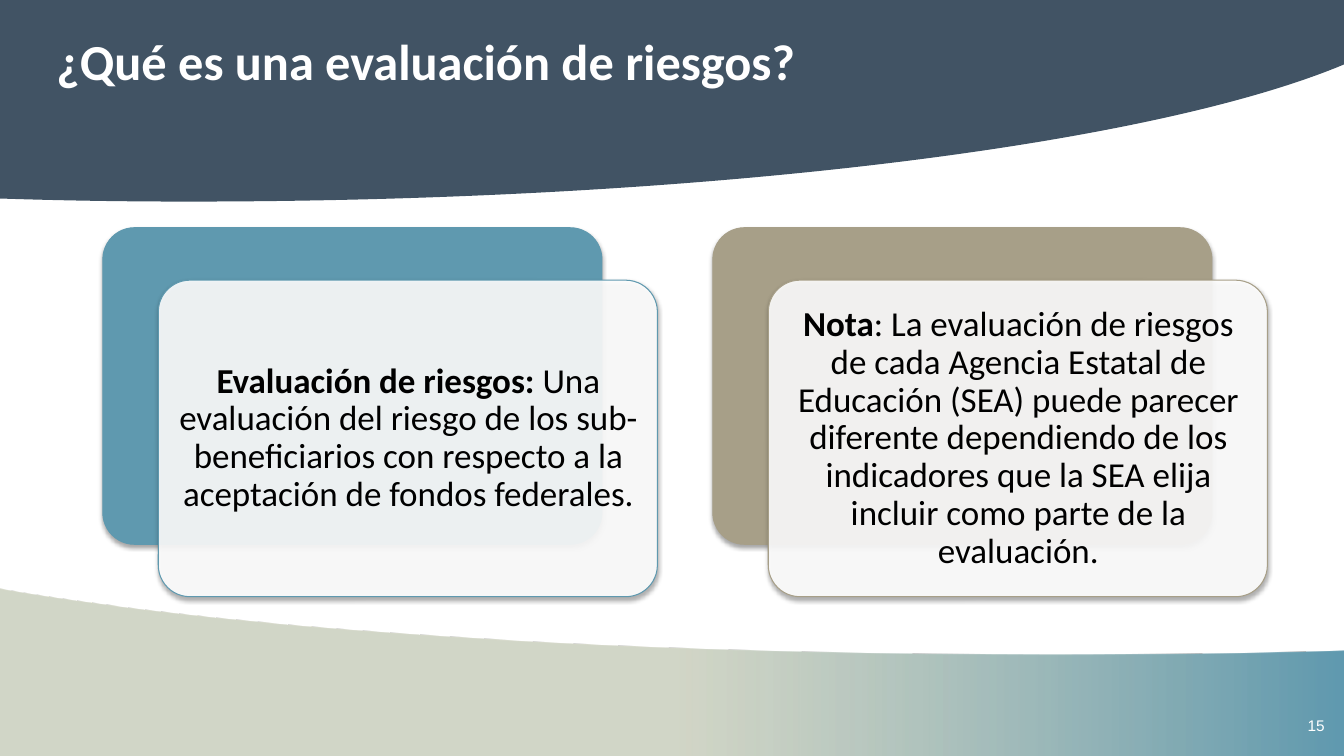
"""Build a slide that defines a risk assessment in two layered cards."""
from dataclasses import dataclass

from lxml import etree
from pptx import Presentation
from pptx import util as u
from pptx.dml.color import RGBColor
from pptx.enum import shapes, text
from pptx.oxml.ns import qn

PX = 9144


@dataclass(frozen=True)
class Theme:
    """Colours, fonts and type sizes of the slide."""

    navy: str = "415364"
    teal: str = "5F99AF"
    tan: str = "A79F88"
    sage: str = "B7BDA4"
    white: str = "FFFFFF"
    black: str = "000000"
    font: str = "Calibri"
    number_font: str = "Arial"
    title_size: int = 36
    body_size: int = 25
    number_size: int = 11


THEME = Theme()
HEADER = [
    [(1333, 64)],
    [(1333, 0)],
    [(0, 0)],
    [(0, 197)],
    [(60, 199), (123, 200), (186, 200)],
    [(700, 200), (1142, 144), (1333, 64)],
]
FOOTER = [
    [(1041, 649)],
    [(725, 649), (436, 635), (216, 613)],
    [(133, 604), (61, 595), (0, 584)],
    [(0, 751)],
    [(1333, 751)],
    [(1333, 645)],
    [(1240, 648), (1142, 649), (1041, 649)],
]
CARDS = [
    (102, THEME.teal, "Evaluación de riesgos: ",
     "Una evaluación del riesgo de los sub-beneficiarios con respecto a la "
     "aceptación de fondos federales."),
    (707, THEME.tan, "Nota",
     ": La evaluación de riesgos de cada Agencia Estatal de Educación (SEA) "
     "puede parecer diferente dependiendo de los indicadores que la SEA elija "
     "incluir como parte de la evaluación."),
]


def rgb(value):
    """Return a colour from its hex digits."""
    return RGBColor.from_string(value)


def px(*lengths):
    """Turn pixel lengths into EMU."""
    return [length * PX for length in lengths]


def add_band(page, outline):
    """Add a band behind the title, with a curve for each three-point part."""
    (start,), *parts = outline
    builder = page.shapes.build_freeform(*px(*start))
    builder.add_line_segments([px(*point) for part in parts for point in part])
    band = builder.convert_to_shape()
    lines = iter(list(band._element.iter(qn("a:lnTo"))))
    for part in parts:
        steps = [next(lines) for _ in part]
        if len(steps) == 3:
            curve = etree.Element(qn("a:cubicBezTo"))
            steps[0].addprevious(curve)
            for step in steps:
                curve.append(step[0])
                step.getparent().remove(step)
    band.shadow.inherit = False
    band.line.fill.background()
    page.shapes.title._element.addprevious(band._element)
    return band


def set_alpha(parent, percent):
    """Make the first colour under an element partly transparent."""
    color = next(parent.iter(qn("a:srgbClr")))
    etree.SubElement(color, qn("a:alpha"), val=str(percent * 1000))


def fade(band):
    """Fill a band with a gradient from sage to teal."""
    band.fill.gradient()
    band.fill.gradient_angle = 0
    colors = ((0.5, THEME.sage), (1, THEME.teal))
    for stop, (position, color) in zip(band.fill.gradient_stops, colors):
        stop.position = position
        stop.color.rgb = rgb(color)
    set_alpha(band._element.spPr, 61)


def add_span(para, words, size, color, font=THEME.font, bold=False):
    """Add one formatted run to a paragraph."""
    span = para.add_run()
    span.text = words
    span.font.name = font
    span.font.size = u.Pt(size)
    span.font.bold = bold
    span.font.color.rgb = rgb(color)


def add_panel(page, place, fill, line):
    """Add a rounded panel with a soft shadow."""
    panel = page.shapes.add_shape(shapes.MSO_SHAPE.ROUNDED_RECTANGLE, *px(*place))
    panel.adjustments[0] = 0.1
    panel.fill.solid()
    panel.fill.fore_color.rgb = rgb(fill)
    panel.line.color.rgb = rgb(line)
    panel.line.width = u.Pt(0.75)
    panel.shadow.inherit = False
    effects = panel._element.spPr.find(qn("a:effectLst"))
    shadow = etree.SubElement(effects, qn("a:outerShdw"), blurRad=str(u.Pt(3.1)),
                              dist=str(u.Pt(1.8)), dir="5400000", rotWithShape="0")
    etree.SubElement(shadow, qn("a:srgbClr"), val=THEME.black)
    set_alpha(shadow, 35)
    return panel


def add_card(page, left, color, lead, body):
    """Add a coloured panel overlapped by a white panel with text."""
    top, width, height = 226, 495, 314
    add_panel(page, (left, top, width, height), color, color)
    front = add_panel(page, (left + 55, top + 52, width, height), THEME.white, color)
    set_alpha(front._element.spPr, 90)
    box = page.shapes.add_textbox(*px(left + 65, top + 61, width - 19, height - 18))
    frame = box.text_frame
    frame.word_wrap = True
    frame.vertical_anchor = text.MSO_ANCHOR.MIDDLE
    frame.margin_left = frame.margin_right = u.Inches(0.1)
    frame.margin_top = frame.margin_bottom = u.Inches(0.1)
    para = frame.paragraphs[0]
    para.alignment = text.PP_ALIGN.CENTER
    para.line_spacing = 0.9
    add_span(para, lead, THEME.body_size, THEME.black, bold=True)
    add_span(para, body, THEME.body_size, THEME.black)


def set_title(page, words):
    """Place and format the title placeholder."""
    title = page.shapes.title
    title.left, title.top, title.width, title.height = px(46, 25, 1200, 75)
    frame = title.text_frame
    frame.auto_size = text.MSO_AUTO_SIZE.NONE
    frame.vertical_anchor = text.MSO_ANCHOR.TOP
    para = frame.paragraphs[0]
    para.alignment = text.PP_ALIGN.LEFT
    add_span(para, words, THEME.title_size, THEME.white, bold=True)


def add_number(page, words):
    """Add the page number in the lower right corner."""
    box = page.shapes.add_textbox(*px(1287, 706, 39, 29))
    frame = box.text_frame
    frame.word_wrap = False
    frame.auto_size = text.MSO_AUTO_SIZE.SHAPE_TO_FIT_TEXT
    add_span(frame.paragraphs[0], words, THEME.number_size,
             THEME.white, THEME.number_font)


def main():
    """Build and save the deck."""
    deck = Presentation()
    deck.slide_width, deck.slide_height = px(1333, 750)
    page = deck.slides.add_slide(deck.slide_layouts[5])
    header = add_band(page, HEADER)
    header.fill.solid()
    header.fill.fore_color.rgb = rgb(THEME.navy)
    fade(add_band(page, FOOTER))
    set_title(page, "¿Qué es una evaluación de riesgos?")
    for card in CARDS:
        add_card(page, *card)
    add_number(page, "15")
    deck.save("out.pptx")


if __name__ == "__main__":
    main()
